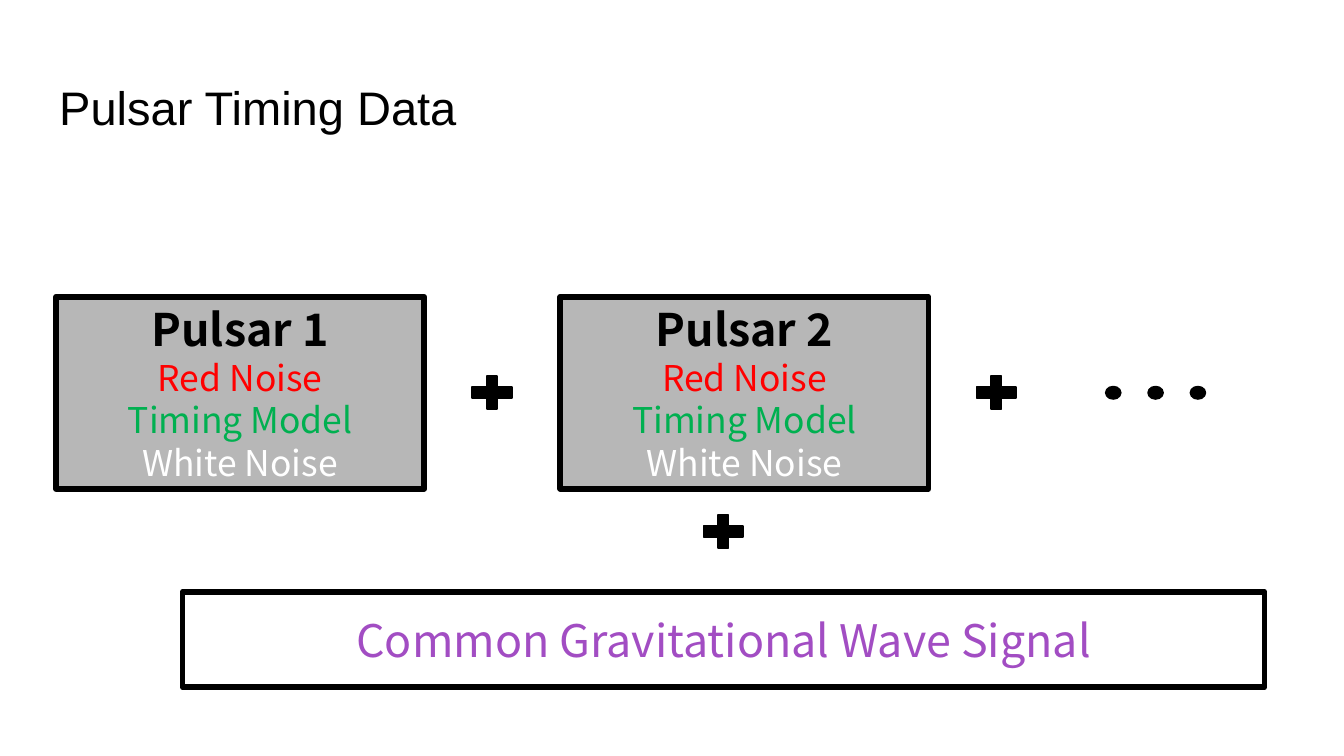
"""Build the pulsar timing data slide."""
from dataclasses import dataclass

import pptx
import pptx.dml.color
import pptx.enum.shapes
import pptx.enum.text
import pptx.util

Cm = pptx.util.Cm
Pt = pptx.util.Pt
SHAPE = pptx.enum.shapes.MSO_SHAPE
ALIGN = pptx.enum.text.PP_ALIGN
ANCHOR = pptx.enum.text.MSO_ANCHOR

COLOURS = {
    "black": "000000",
    "white": "FFFFFF",
    "grey": "B7B7B7",
    "red": "FF0000",
    "green": "00B050",
    "purple": "A24DC3",
}
BODY_FONT = "Noto Sans CJK JP"
PULSAR_PITCH = 9.53
DOT_PITCH = 0.8


@dataclass
class Area:
    left: float
    top: float
    width: float
    height: float

    def lengths(self) -> list:
        return [Cm(value) for value in (self.left, self.top, self.width, self.height)]


@dataclass
class Line:
    text: str
    size: float
    colour: str
    bold: bool = False
    font: str = BODY_FONT


def rgb(name: str) -> pptx.dml.color.RGBColor:
    return pptx.dml.color.RGBColor.from_string(COLOURS[name])


def write(box, lines: list[Line], align, margin: float) -> None:
    frame = box.text_frame
    frame_format = {
        "word_wrap": True,
        "vertical_anchor": ANCHOR.MIDDLE,
        "margin_left": Cm(0.25),
        "margin_right": Cm(0.25),
        "margin_top": Cm(margin),
        "margin_bottom": Cm(margin),
    }
    for name, value in frame_format.items():
        setattr(frame, name, value)
    for index, line in enumerate(lines):
        para = frame.add_paragraph() if index else frame.paragraphs[0]
        para.alignment = align
        span = para.add_run()
        span.text = line.text
        font_format = {"name": line.font, "size": Pt(line.size), "bold": line.bold}
        for name, value in font_format.items():
            setattr(span.font, name, value)
        span.font.color.rgb = rgb(line.colour)


def draw(page, kind, area: Area, fill: str | None, weight: float):
    shape = page.shapes.add_shape(kind, *area.lengths())
    shape.shadow.inherit = False
    if fill:
        shape.fill.solid()
        shape.fill.fore_color.rgb = rgb(fill)
    else:
        shape.fill.background()
    shape.line.color.rgb = rgb("black")
    shape.line.width = Pt(weight)
    return shape


def draw_pulsar(page, number: int, left: float) -> None:
    box = draw(page, SHAPE.RECTANGLE, Area(left, 5.61, 6.96, 3.63), "grey", 3)
    lines = [
        Line(f"Pulsar {number}", 24, "black", True),
        Line("Red Noise", 19, "red"),
        Line("Timing Model", 19, "green"),
        Line("White Noise", 19, "white"),
    ]
    write(box, lines, ALIGN.CENTER, 0.13)


def draw_plus(page, left: float, top: float) -> None:
    plus = draw(page, SHAPE.MATH_PLUS, Area(left, top, 1.02, 0.84), "black", 1)
    plus.adjustments[0] = 0.235


def main() -> None:
    deck = pptx.Presentation()
    deck.slide_width, deck.slide_height = Cm(25.4), Cm(14.29)
    page = deck.slides.add_slide(deck.slide_layouts[6])

    title = page.shapes.add_textbox(*Area(0.87, 1.22, 23.67, 1.6).lengths())
    heading = Line("Pulsar Timing Data", 25.2, "black", font="Arial")
    write(title, [heading], ALIGN.LEFT, 0.25)

    for index in range(2):
        draw_pulsar(page, index + 1, 1.06 + index * PULSAR_PITCH)
        draw_plus(page, 8.79 + index * PULSAR_PITCH, 7)
    for index in range(3):
        dot = Area(20.9 + index * DOT_PITCH, 7.31, 0.28, 0.23)
        draw(page, SHAPE.OVAL, dot, "black", 1)

    draw_plus(page, 13.16, 9.63)
    signal = draw(page, SHAPE.RECTANGLE, Area(3.45, 11.19, 20.45, 1.8), None, 3)
    label = Line("Common Gravitational Wave Signal", 24, "purple")
    write(signal, [label], ALIGN.CENTER, 0.13)

    deck.save("out.pptx")


if __name__ == "__main__":
    main()
